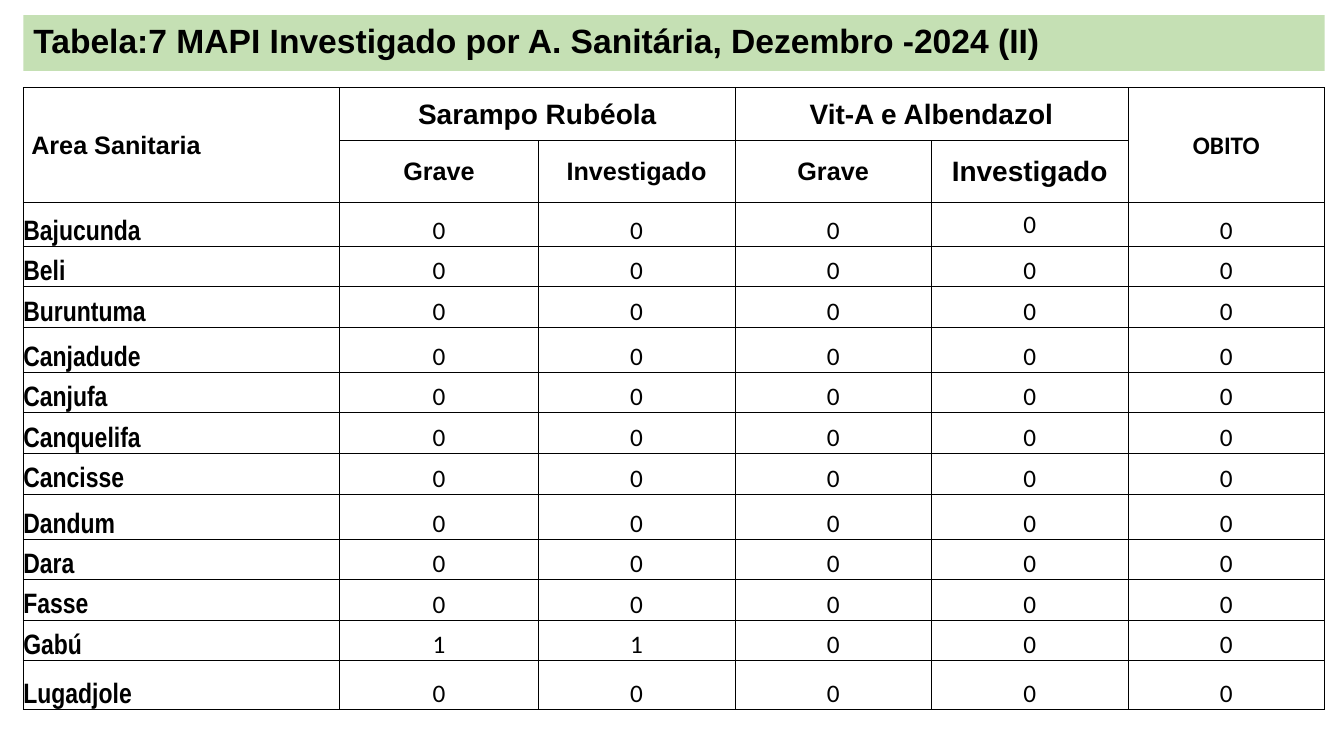
from dataclasses import dataclass

from lxml.etree import SubElement
from pptx import Presentation
from pptx.dml.color import RGBColor
from pptx.enum.text import MSO_ANCHOR, MSO_AUTO_SIZE, PP_ALIGN
from pptx.oxml.ns import qn
from pptx.slide import Slide
from pptx.table import Table, _Cell
from pptx.util import Pt


@dataclass(frozen=True)
class Look:
    font: str
    size: int
    bold: bool = True
    align: PP_ALIGN = PP_ALIGN.CENTER
    anchor: MSO_ANCHOR = MSO_ANCHOR.MIDDLE
    left: float = 0.75


@dataclass(frozen=True)
class Head:
    row: int
    col: int
    text: str
    look: Look
    rows: int = 1
    cols: int = 1


@dataclass(frozen=True)
class Area:
    name: str
    height: float
    counts: tuple[int, ...] = (0, 0, 0, 0, 0)


BLACK, WHITE, GREEN = "000000", "FFFFFF", "C5E0B4"
LEFT, WIDTH = 16.6, 929.5
COLS = (226.1, 141.8, 140.4, 140.4, 140.4, 140.4)
HEAD_ROWS = (38.2, 44)

TITLE = Look("Arial", 24, align=PP_ALIGN.LEFT)
LABEL = Look("Arial", 18, align=PP_ALIGN.LEFT, left=5.75)
GROUP = Look("Arial", 20)
SUB = Look("Arial", 18)
DEATH = Look("Calibri", 18)
NAME = Look("Arial Narrow", 20, True, PP_ALIGN.LEFT, MSO_ANCHOR.BOTTOM, 0)
COUNT = Look("Calibri", 18, False, anchor=MSO_ANCHOR.BOTTOM)
RAISED = Look("Calibri", 18, False)

HEADS = (
    Head(0, 0, "Area Sanitaria", LABEL, rows=2),
    Head(0, 1, "Sarampo Rubéola", GROUP, cols=2),
    Head(0, 3, "Vit-A e Albendazol", GROUP, cols=2),
    Head(0, 5, "OBITO", DEATH, rows=2),
    Head(1, 1, "Grave", SUB),
    Head(1, 2, "Investigado", SUB),
    Head(1, 3, "Grave", SUB),
    Head(1, 4, "Investigado", GROUP),
)

AREAS = (
    Area("Bajucunda", 31.4),
    Area("Beli", 28.8),
    Area("Buruntuma", 28.8),
    Area("Canjadude", 32.4),
    Area("Canjufa", 28.8),
    Area("Canquelifa", 29.2),
    Area("Cancisse", 28.8),
    Area("Dandum", 32.4),
    Area("Dara", 28.8),
    Area("Fasse", 28.8),
    Area("Gabú", 28.8, (1, 1, 0, 0, 0)),
    Area("Lugadjole", 35.4),
)


def color(code: str) -> RGBColor:
    return RGBColor.from_string(code)


def style(frame, look: Look) -> None:
    para = frame.paragraphs[0]
    para.alignment = look.align
    for run in para.runs:
        run.font.name = look.font
        run.font.size = Pt(look.size)
        run.font.bold = look.bold
        run.font.color.rgb = color(BLACK)


def frame_cell(cell: _Cell) -> None:
    """Give a cell thin black borders and a white fill."""
    props = cell._tc.get_or_add_tcPr()
    for side in ("lnL", "lnR", "lnT", "lnB"):
        line = SubElement(props, qn(f"a:{side}"), w=str(Pt(0.5)))
        fill = SubElement(line, qn("a:solidFill"))
        SubElement(fill, qn("a:srgbClr"), val=BLACK)
    cell.fill.solid()
    cell.fill.fore_color.rgb = color(WHITE)


def write(cell: _Cell, text: str, look: Look) -> None:
    cell.text_frame.text = text
    cell.vertical_anchor = look.anchor
    cell.margin_left = Pt(look.left)
    cell.margin_right = cell.margin_top = Pt(min(look.left, 0.75))
    cell.margin_bottom = Pt(0)
    style(cell.text_frame, look)


def add_title(slide: Slide) -> None:
    title = slide.shapes.title
    title.left, title.top = Pt(LEFT), Pt(10.8)
    title.width, title.height = Pt(WIDTH), Pt(39.8)
    title.fill.solid()
    title.fill.fore_color.rgb = color(GREEN)
    frame = title.text_frame
    frame.text = "Tabela:7 MAPI Investigado por A. Sanitária, Dezembro -2024 (II)"
    frame.word_wrap = True
    frame.auto_size = MSO_AUTO_SIZE.NONE
    frame.vertical_anchor = TITLE.anchor
    frame.paragraphs[0].line_spacing = 0.9
    style(frame, TITLE)


def add_grid(slide: Slide) -> Table:
    rows = HEAD_ROWS + tuple(area.height for area in AREAS)
    table = slide.shapes.add_table(
        len(rows), len(COLS), Pt(LEFT), Pt(62.4), Pt(WIDTH), Pt(sum(rows))
    ).table
    table.first_row = table.horz_banding = False
    for col, width in zip(table.columns, COLS):
        col.width = Pt(width)
    for row, height in zip(table.rows, rows):
        row.height = Pt(height)
    for cell in table.iter_cells():
        frame_cell(cell)
    return table


def fill_grid(table: Table) -> None:
    # Headings
    for head in HEADS:
        cell = table.cell(head.row, head.col)
        if head.rows > 1 or head.cols > 1:
            end = table.cell(head.row + head.rows - 1, head.col + head.cols - 1)
            cell.merge(end)
        write(cell, head.text, head.look)

    # One row per health area; a single count sits higher in its cell
    for row, area in enumerate(AREAS, len(HEAD_ROWS)):
        write(table.cell(row, 0), area.name, NAME)
        for col, count in enumerate(area.counts, 1):
            look = RAISED if (row, col) == (2, 4) else COUNT
            write(table.cell(row, col), str(count), look)


def main() -> None:
    deck = Presentation()
    deck.slide_width, deck.slide_height = Pt(960), Pt(540)
    slide = deck.slides.add_slide(deck.slide_layouts[5])
    add_title(slide)
    fill_grid(add_grid(slide))
    deck.save("out.pptx")


if __name__ == "__main__":
    main()
